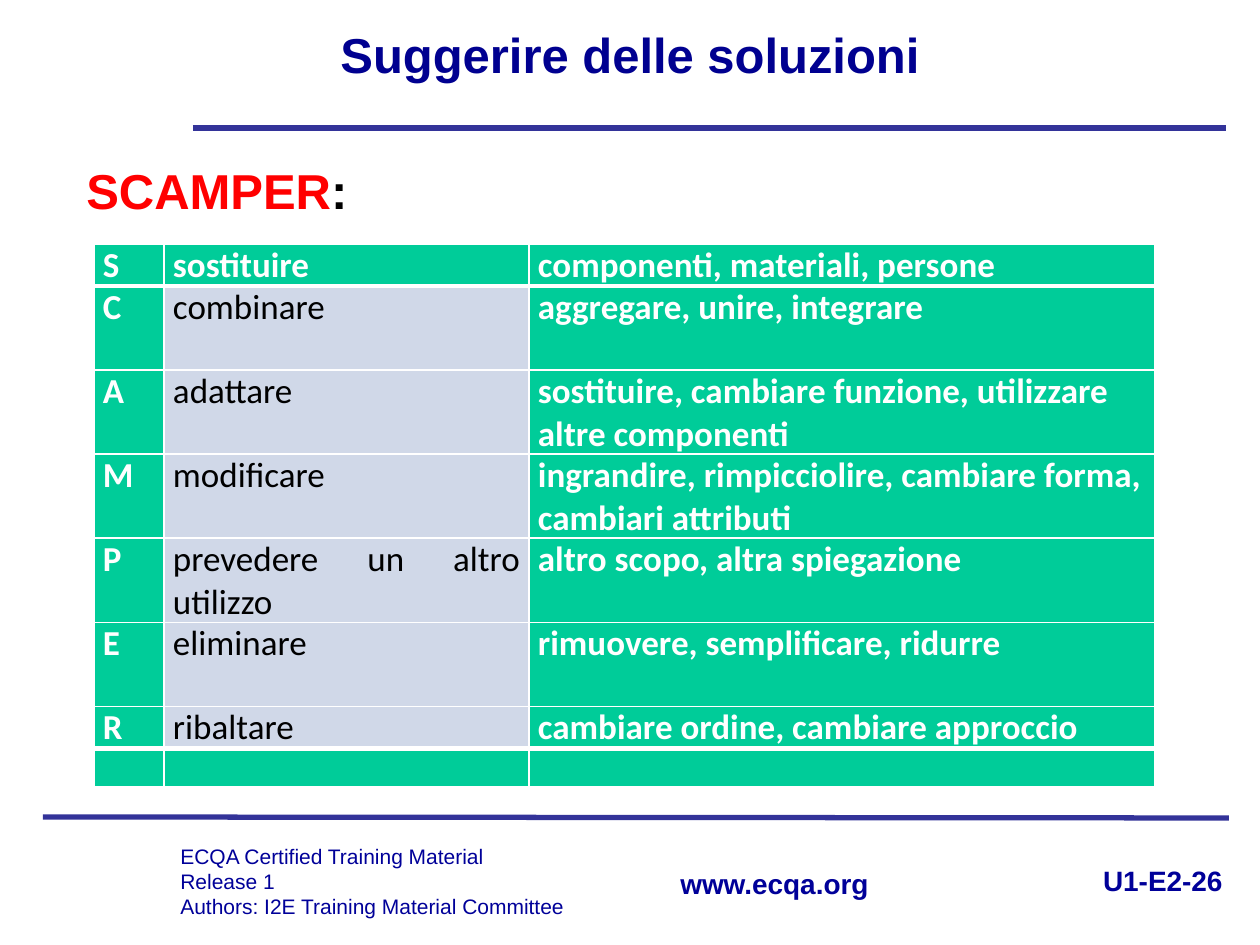
from pptx import Presentation
from pptx.dml.color import RGBColor
from pptx.enum.shapes import MSO_CONNECTOR
from pptx.enum.text import MSO_ANCHOR, MSO_AUTO_SIZE, PP_ALIGN as ALIGN
from pptx.oxml.ns import qn
from pptx.util import Emu, Pt
from lxml.etree import SubElement

COLORS = {
    "rule": "333399", "footer": "000099", "title": "000090",
    "accent": "FF0000", "text": "000000", "white": "FFFFFF",
    "green": "00CC99", "pale": "D0D8E8",
}
SCAMPER = [
    ("S", "sostituire", "componenti, materiali, persone"),
    ("C", "combinare", "aggregare, unire, integrare"),
    ("A", "adattare", "sostituire, cambiare funzione, utilizzare altre componenti"),
    ("M", "modificare", "ingrandire, rimpicciolire, cambiare forma, cambiari attributi"),
    ("P", "prevedere un altro utilizzo", "altro scopo, altra spiegazione"),
    ("E", "eliminare", "rimuovere, semplificare, ridurre"),
    ("R", "ribaltare", "cambiare ordine, cambiare approccio"),
    ("", "", ""),
]
COLUMN_WIDTHS = [70, 365, 626]
ROW_HEIGHTS = [42] + [84] * 5 + [42, 38]
THICK_BORDERS = (1, len(SCAMPER) - 1)  # below the first row, above the last


def px(length):
    return Emu(round(length * 914400 / 126))


def rgb(name):
    return RGBColor.from_string(COLORS[name])


def style(runs, size, color, bold=False, font="Arial"):
    for run in runs:
        run.font.name = font
        run.font.size = Pt(size)
        run.font.bold = bold
        run.font.color.rgb = rgb(color)


def add_rule(slide, x1, y1, x2, y2):
    rule = slide.shapes.add_connector(
        MSO_CONNECTOR.STRAIGHT, px(x1), px(y1), px(x2), px(y2))
    rule.line.color.rgb = rgb("rule")
    rule.line.width = Pt(3)
    SubElement(rule._element.spPr, qn("a:effectLst"))


def add_label(slide, box, text, size, color, bold=True, align=ALIGN.LEFT):
    frame = slide.shapes.add_textbox(*map(px, box)).text_frame
    frame.word_wrap = True
    frame.text = text
    for paragraph in frame.paragraphs:
        paragraph.alignment = align
        style(paragraph.runs, size, color, bold)
    return frame


def add_title(slide, box):
    title = slide.shapes.title
    title.left, title.top, title.width, title.height = map(px, box)
    frame = title.text_frame
    frame.text = "Suggerire delle soluzioni"
    frame.auto_size = MSO_AUTO_SIZE.NONE
    frame.vertical_anchor = MSO_ANCHOR.MIDDLE
    frame.paragraphs[0].alignment = ALIGN.CENTER
    style(frame.paragraphs[0].runs, 28, "title", True)


def add_heading(slide, box):
    heading = add_label(slide, box, "SCAMPER", 28, "accent").paragraphs[0]
    heading.line_spacing = 1.5
    colon = heading.add_run()
    colon.text = ":"
    style([colon], 28, "text", True)


def set_borders(cell, row):
    properties = cell._tc.get_or_add_tcPr()
    top, bottom = (3 if edge in THICK_BORDERS else 1 for edge in (row, row + 1))
    sides = {"a:lnL": 1, "a:lnR": 1, "a:lnT": top, "a:lnB": bottom}
    for position, (side, width) in enumerate(sides.items()):
        line = SubElement(properties, qn(side), w=str(Pt(width)))
        fill = SubElement(line, qn("a:solidFill"))
        SubElement(fill, qn("a:srgbClr"), val=COLORS["white"])
        properties.insert(position, line)  # borders come before the fill


def add_scamper_table(slide, left, top):
    table = slide.shapes.add_table(
        len(SCAMPER), len(COLUMN_WIDTHS), px(left), px(top),
        px(sum(COLUMN_WIDTHS)), px(sum(ROW_HEIGHTS))).table
    for column, width in zip(table.columns, COLUMN_WIDTHS):
        column.width = px(width)
    for row, height in zip(table.rows, ROW_HEIGHTS):
        row.height = px(height)
    for r, words in enumerate(SCAMPER):
        for c, word in enumerate(words):
            cell = table.cell(r, c)
            plain = c == 1 and 0 < r < len(SCAMPER) - 1
            cell.margin_left = cell.margin_right = px(9)
            cell.margin_top = cell.margin_bottom = 0
            cell.fill.solid()
            cell.fill.fore_color.rgb = rgb("pale" if plain else "green")
            set_borders(cell, r)
            cell.text = word
            paragraph = cell.text_frame.paragraphs[0]
            paragraph.alignment = ALIGN.LEFT if c == 2 and r else ALIGN.JUSTIFY
            style(paragraph.runs, 20, "text" if plain else "white",
                  not plain, "Calibri")


def add_footer(slide, left, top):
    add_rule(slide, left, top, left + 1186, top + 1)
    add_label(slide, (left + 125, top + 20, 452, 90),
              "ECQA Certified Training Material\vRelease 1\n"
              "Authors: I2E Training Material Committee", 12, "footer", False)
    add_label(slide, (left + 616, top + 43, 222, 47),
              "www.ecqa.org", 16, "footer", align=ALIGN.RIGHT)
    add_label(slide, (left + 980, top + 40, 212, 47),
              "U1-E2-26", 16, "footer", align=ALIGN.RIGHT)


def main():
    deck = Presentation()
    deck.slide_width, deck.slide_height = px(1260), px(945)
    slide = deck.slides.add_slide(deck.slide_layouts[5])  # Title Only

    # Header
    add_rule(slide, 193, 128, 1226, 128)
    add_title(slide, (0, 18, 1260, 72))
    # Content
    add_heading(slide, (74, 125, 1081, 97))
    add_scamper_table(slide, 94, 244)
    # Footer
    add_footer(slide, 43, 817)

    deck.save("out.pptx")


if __name__ == "__main__":
    main()
